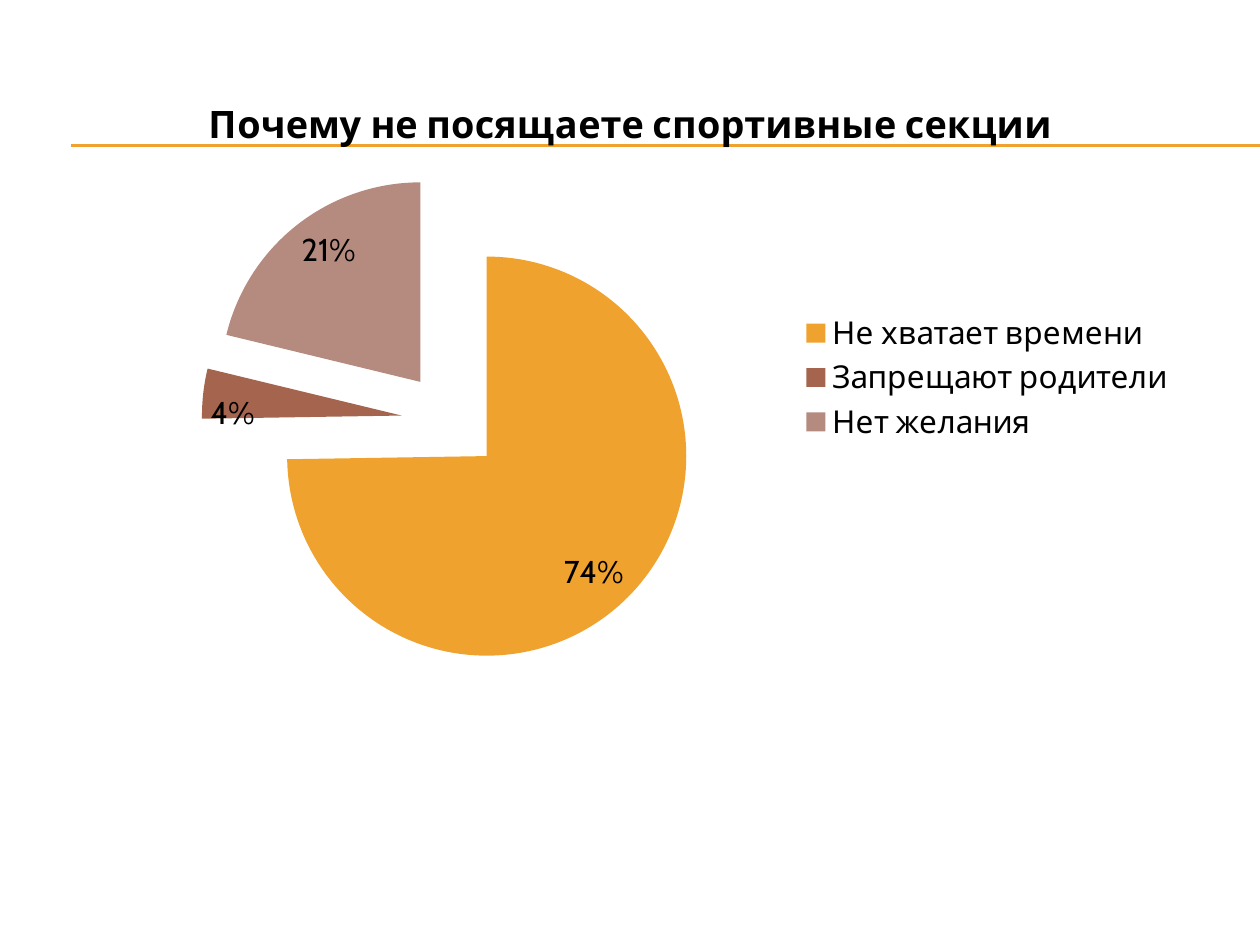
from pptx import Presentation
from pptx.chart.data import CategoryChartData
from pptx.dml.color import RGBColor
from pptx.enum.chart import XL_CHART_TYPE, XL_LABEL_POSITION, XL_LEGEND_POSITION
from pptx.enum.shapes import MSO_CONNECTOR
from pptx.oxml import parse_xml
from pptx.oxml.ns import nsdecls, qn
from pptx.util import Pt
from lxml.etree import SubElement

COLORS = {"gold": "F0A22E", "brown": "A5644E", "rose": "B58B80", "text": "000000"}
FONT = "Cabin"
TITLE = "Почему не посящаете спортивные секции"
REASONS = [
    ("Не хватает времени", 74, "gold"),
    ("Запрещают родители", 4, "brown"),
    ("Нет желания", 21, "rose"),
]


def rgb(name):
    return RGBColor.from_string(COLORS[name])


def style_font(font, size, bold=False):
    font.name, font.size, font.bold = FONT, Pt(size), bold
    font.color.rgb = rgb("text")


def layout_xml(x, y, w=None, h=None, inner=False):
    """Manual chart layout, in fractions of the chart frame."""
    target = '<c:layoutTarget val="inner"/>' if inner else ""
    modes = '<c:xMode val="edge"/><c:yMode val="edge"/>'
    sizes = "".join(f'<c:{tag} val="{v}"/>'
                    for tag, v in zip("xywh", (x, y, w, h)) if v is not None)
    return parse_xml(f'<c:layout {nsdecls("c")}><c:manualLayout>{target}{modes}{sizes}'
                     '</c:manualLayout></c:layout>')


def set_layout(parent, index, layout):
    for old in parent.findall(qn("c:layout")):
        parent.remove(old)
    parent.insert(index, layout)


def add_rules(s, left, top, width, gap):
    """Two hairlines under the title."""
    for y in (top, top + gap):
        line = s.shapes.add_connector(MSO_CONNECTOR.STRAIGHT, Pt(left), Pt(y),
                                      Pt(left + width), Pt(y))
        line.line.color.rgb = rgb("gold")
        line.line.width = Pt(0.75)
        SubElement(line._element.spPr, qn("a:effectLst"))


def add_reasons_pie(s, left, top, width, height):
    data = CategoryChartData(number_format='0"%"')
    data.categories = [name for name, _, _ in REASONS]
    data.add_series(TITLE, [value for _, value, _ in REASONS])
    chart = s.shapes.add_chart(XL_CHART_TYPE.PIE, Pt(left), Pt(top),
                               Pt(width), Pt(height), data).chart
    style_font(chart.font, 18)

    # Title
    chart.has_title = True
    r = chart.chart_title.text_frame.paragraphs[0].add_run()
    r.text = TITLE
    style_font(r.font, 21.6, bold=True)
    set_layout(chart.chart_title._element, 1, layout_xml(0.13, 0.04))

    # Legend
    chart.has_legend = True
    chart.legend.position = XL_LEGEND_POSITION.RIGHT
    chart.legend.include_in_layout = False
    style_font(chart.legend.font, 18)

    # Exploded slices
    plot = chart.plots[0]
    plot.vary_by_categories = True
    series = plot.series[0]
    for i, (_, _, color) in enumerate(REASONS):
        fill = series.points[i].format.fill
        fill.solid()
        fill.fore_color.rgb = rgb(color)
    explosion = parse_xml(f'<c:explosion {nsdecls("c")} val="25"/>')
    series._element.find(qn("c:dPt")).addprevious(explosion)
    plot_area = chart._chartSpace.chart.plotArea
    set_layout(plot_area, 0, layout_xml(0.13, 0.17, 0.44, 0.8, inner=True))

    # Share labels
    plot.has_data_labels = True
    labels = plot.data_labels
    labels.show_value = True
    labels.number_format = '0"%"'
    labels.number_format_is_linked = False
    labels.position = XL_LABEL_POSITION.INSIDE_END
    style_font(labels.font, 18)


def main():
    prs = Presentation()
    prs.slide_width, prs.slide_height = Pt(720), Pt(540)
    s = prs.slides.add_slide(prs.slide_layouts[6])
    add_rules(s, 40.5, 82.8, 679.5, 0.6)
    add_reasons_pie(s, 31, 37.5, 648, 356.5)
    prs.save("out.pptx")


if __name__ == "__main__":
    main()
